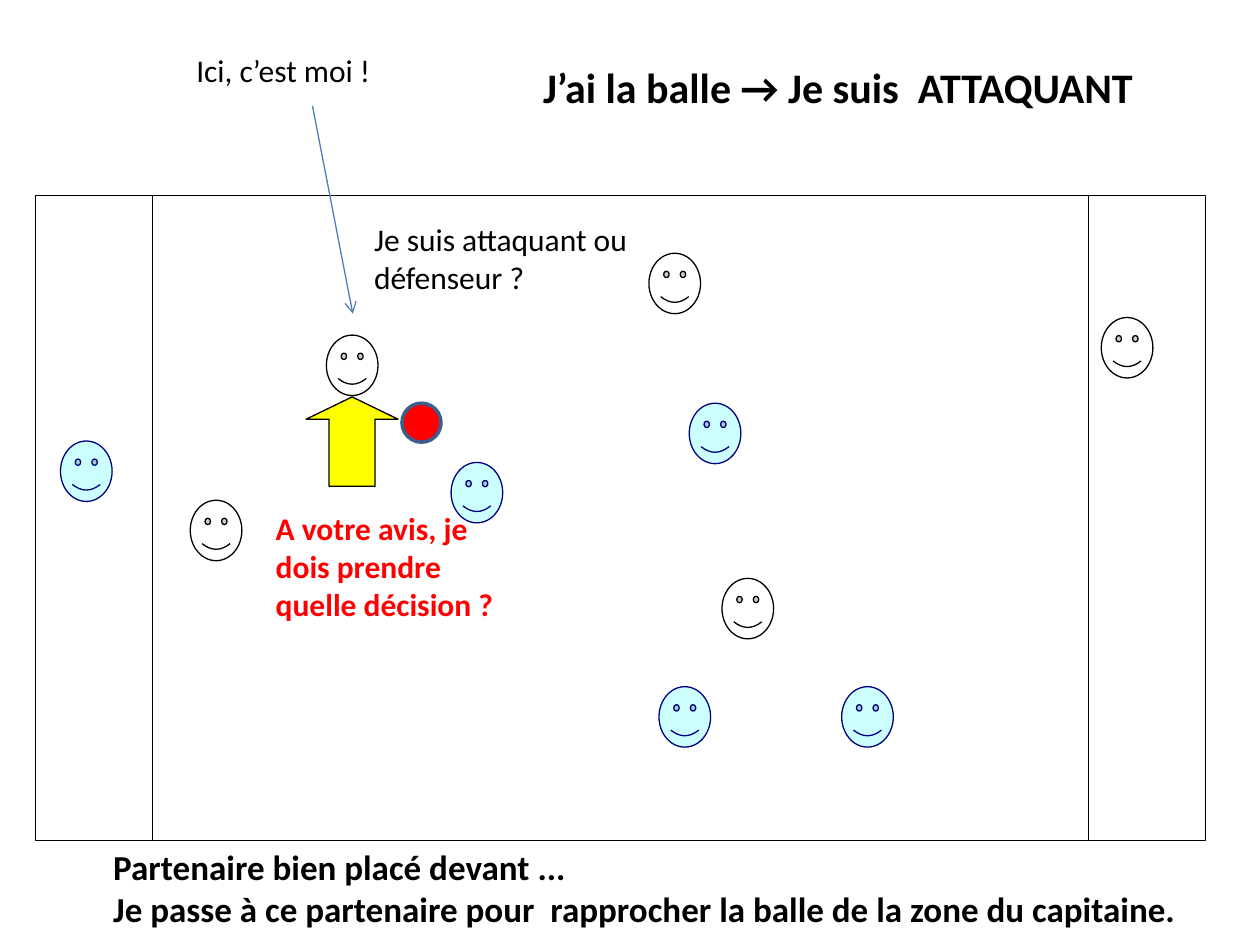
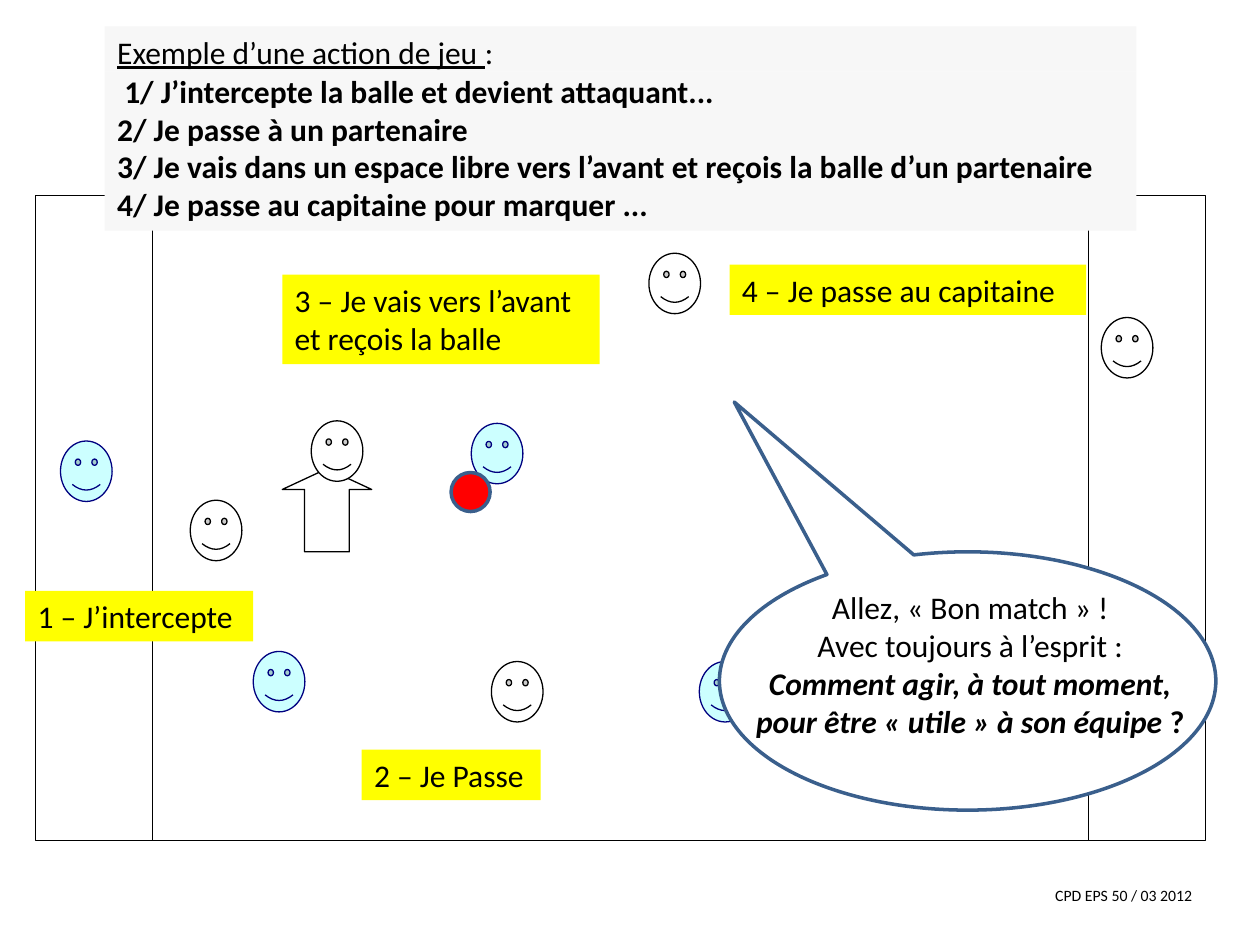
from dataclasses import dataclass
from lxml.etree import SubElement
from pptx import Presentation
from pptx.dml.color import RGBColor as RGB
from pptx.enum.shapes import MSO_CONNECTOR as CONNECTOR, MSO_SHAPE as PRESET
from pptx.enum.text import MSO_ANCHOR as ANCHOR, MSO_AUTO_SIZE as AUTO_SIZE, PP_ALIGN as ALIGN
from pptx.oxml.ns import qn
from pptx.util import Inches, Pt


@dataclass(frozen=True)
class Theme:
    font: str = "Calibri"
    black: RGB = RGB(0, 0, 0)
    white: RGB = RGB(255, 255, 255)
    red: RGB = RGB(255, 0, 0)
    yellow: RGB = RGB(255, 255, 0)
    cyan: RGB = RGB(0xCC, 0xFF, 0xFF)
    navy: RGB = RGB(0, 0, 0x80)
    outline: RGB = RGB(0x3A, 0x5F, 0x8C)
    arrow: RGB = RGB(0x4B, 0x7E, 0xBC)
    panel: RGB = RGB(0xF7, 0xF7, 0xF7)
    heading: int = 24
    decision: int = 20
    body: int = 18
    credit: int = 9
    thin: float = 0.75
    thick: float = 2


theme = Theme()
BOLD = {"bold": True}
BOLD_ITALIC = {"bold": True, "italic": True}
WHITE_TEAM = (theme.white, theme.black, theme.thin)
BLUE_TEAM = (theme.cyan, theme.navy, theme.thin)
RUNNER = (theme.yellow, theme.black, theme.thin)
BALL = (theme.red, theme.outline, theme.thick)
BUBBLE = (theme.white, theme.outline, theme.thick)
FACE = (0.41, 0.48)
BALL_SIZE = (0.31, 0.31)


def add_figure(slide, preset, box, style, adjustments=()):
    fill, line, weight = style
    shape = slide.shapes.add_shape(preset, *map(Inches, box))
    shape.shadow.inherit = False
    shape.fill.solid()
    shape.fill.fore_color.rgb = fill
    shape.line.color.rgb = line
    shape.line.width = Pt(weight)
    for index, value in enumerate(adjustments):
        shape.adjustments[index] = value


def write_text(shape, box, paragraphs, size=theme.body, color=theme.black,
               align=ALIGN.LEFT, fill=None, margins=(0.05, 0.05)):
    for name, value in zip(("left", "top", "width", "height"), box):
        setattr(shape, name, Inches(value))
    if fill is not None:
        shape.fill.solid()
        shape.fill.fore_color.rgb = fill
    frame = shape.text_frame
    frame_format = {
        "word_wrap": True, "auto_size": AUTO_SIZE.NONE, "vertical_anchor": ANCHOR.TOP,
        "margin_top": Inches(margins[0]), "margin_bottom": Inches(margins[1]),
    }
    for name, value in frame_format.items():
        setattr(frame, name, value)
    for index, runs in enumerate(paragraphs):
        paragraph = frame.add_paragraph() if index else frame.paragraphs[0]
        paragraph.alignment = align
        paragraph.space_before = Pt(0)
        for text, run_format in runs:
            run = paragraph.add_run()
            run.text = text
            run.font.color.rgb = color
            for name, value in {"name": theme.font, "size": Pt(size), **run_format}.items():
                setattr(run.font, name, value)


presentation = Presentation()
presentation.slide_width = Inches(10)
presentation.slide_height = Inches(7.5)
attack_slide = presentation.slides.add_slide(presentation.slide_layouts[5])
action_slide = presentation.slides.add_slide(presentation.slide_layouts[1])

pitch_zones = [(1.2, 8.36), (0.28, 0.93), (8.64, 0.93)]
shared_players = [
    (1.51, 3.97, WHITE_TEAM), (8.74, 2.52, WHITE_TEAM),
    (5.15, 2.01, WHITE_TEAM), (0.48, 3.5, BLUE_TEAM),
]
attack_players = [
    (5.73, 4.59, WHITE_TEAM), (2.59, 2.66, WHITE_TEAM), (5.23, 5.45, BLUE_TEAM),
    (6.68, 5.45, BLUE_TEAM), (5.47, 3.2, BLUE_TEAM), (3.58, 3.67, BLUE_TEAM),
]
action_players = [
    (2.47, 3.34, WHITE_TEAM), (3.9, 5.25, WHITE_TEAM), (2.01, 5.17, BLUE_TEAM),
    (3.74, 3.36, BLUE_TEAM), (5.55, 5.25, BLUE_TEAM),
]
scenes = [
    (attack_slide, attack_players, (2.43, 3.15, 0.73, 0.71), RUNNER, (3.19, 3.2)),
    (action_slide, action_players, (2.24, 3.72, 0.71, 0.66), WHITE_TEAM, (3.58, 3.75)),
]
for slide, players, body_box, body_style, ball_position in scenes:
    for left, width in pitch_zones:
        add_figure(slide, PRESET.RECTANGLE, (left, 1.55, width, 5.12), WHITE_TEAM)
    add_figure(slide, PRESET.UP_ARROW, body_box, body_style, (0.5, 0.25))
    for left, top, team in shared_players + players:
        add_figure(slide, PRESET.SMILEY_FACE, (left, top, *FACE), team, (0.047,))
    add_figure(slide, PRESET.OVAL, (*ball_position, *BALL_SIZE), BALL)

write_text(attack_slide.shapes.title, (4.21, 0.44, 5.12, 0.5),
           [[("J’ai la balle → Je suis  ATTAQUANT", BOLD)]], theme.heading)

attack_notes = [
    ((1.46, 0.36, 2.83, 0.4), [[("Ici, c’est moi !", {})]], theme.body, theme.black),
    ((2.87, 1.7, 2.52, 0.71), [[("Je suis attaquant ou défenseur ?", {})]],
     theme.body, theme.black),
    ((2.09, 3.99, 2.13, 1.01), [[("A votre avis, je dois prendre quelle décision ?", BOLD)]],
     theme.body, theme.red),
    ((0.8, 6.66, 8.82, 0.77),
     [[("Partenaire bien placé devant ...", BOLD)],
      [("Je passe à ce partenaire pour  rapprocher la balle de la zone du capitaine.", BOLD)]],
     theme.decision, theme.black),
]
for box, paragraphs, size, color in attack_notes:
    note = attack_slide.shapes.add_textbox(*map(Inches, box))
    write_text(note, box, paragraphs, size, color)

pointer = attack_slide.shapes.add_connector(
    CONNECTOR.STRAIGHT, *map(Inches, (2.48, 0.84, 2.8, 2.49)))
pointer.line.color.rgb = theme.arrow
pointer.line.width = Pt(theme.thin)
SubElement(pointer.line._get_or_add_ln(), qn("a:tailEnd"), type="arrow")
SubElement(pointer._element.spPr, qn("a:effectLst"))

steps = [
    " 1/ J’intercepte la balle et devient attaquant...",
    "2/ Je passe à un partenaire",
    "3/ Je vais dans un espace libre vers l’avant et reçois la balle d’un partenaire",
    "4/ Je passe au capitaine pour marquer ...",
]
title = action_slide.shapes.title
step_list = action_slide.placeholders[1]
write_text(title, (0.83, 0.21, 8.19, 0.36),
           [[("Exemple d’une action de jeu ", {"underline": True}), (":", {})]],
           fill=theme.panel, margins=(0.05, 0))
write_text(step_list, (0.83, 0.57, 8.19, 1.26), [[(step, BOLD)] for step in steps],
           fill=theme.panel, margins=(0, 0.05))
for paragraph in step_list.text_frame.paragraphs:
    properties = paragraph._p.get_or_add_pPr()
    properties.set("marL", "0")
    properties.set("indent", "0")
    SubElement(properties, qn("a:buNone"))
for placeholder in (title, step_list):
    placeholder._element.getparent().append(placeholder._element)

step_labels = [
    ((0.2, 4.69, 1.81, 0.4), "1 – J’intercepte"),
    ((2.87, 5.95, 1.42, 0.4), "2 – Je Passe"),
    ((2.24, 2.18, 2.52, 0.71), "3 – Je vais vers l’avant et reçois la balle"),
    ((5.79, 2.1, 2.83, 0.4), "4 – Je passe au capitaine"),
]
for box, text in step_labels:
    label = action_slide.shapes.add_textbox(*map(Inches, box))
    write_text(label, box, [[(text, {})]], fill=theme.yellow)

add_figure(action_slide, PRESET.OVAL_CALLOUT, (5.71, 4.38, 3.94, 2.05), BUBBLE, (-0.47, -1.08))
closing_notes = [
    ((5.79, 4.62, 3.82, 1.31),
     [[("Allez, « Bon match » !", {})],
      [("Avec toujours à l’esprit :", {})],
      [("Comment agir, à tout moment, pour être « utile » à son équipe ", BOLD_ITALIC),
       ("?", BOLD)]],
     theme.body, ALIGN.CENTER),
    ((7.99, 6.98, 1.57, 0.25), [[("CPD EPS 50 / 03 2012", {})]], theme.credit, ALIGN.RIGHT),
]
for box, paragraphs, size, align in closing_notes:
    note = action_slide.shapes.add_textbox(*map(Inches, box))
    write_text(note, box, paragraphs, size, align=align)

presentation.save("out.pptx")
